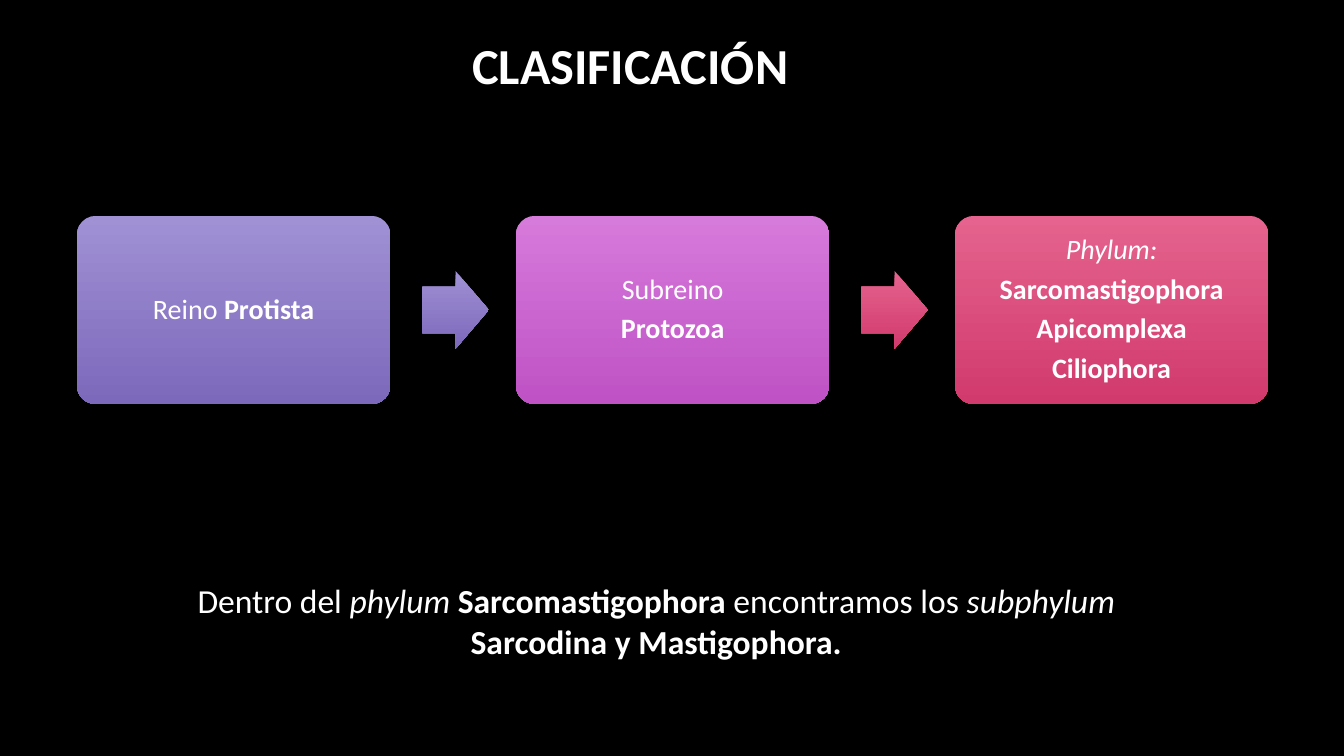
from dataclasses import dataclass

from pptx import Presentation
from pptx.dml.color import RGBColor
from pptx.enum.shapes import MSO_SHAPE as Shape
from pptx.enum.text import MSO_ANCHOR as Anchor, MSO_AUTO_SIZE as AutoSize, PP_ALIGN as Align
from pptx.shapes.autoshape import Shape as AutoShape
from pptx.slide import Slide
from pptx.text.text import TextFrame
from pptx.util import Pt


@dataclass(frozen=True)
class Gradient:
    top: str
    bottom: str


@dataclass(frozen=True)
class Theme:
    font: str = "Calibri"
    background: str = "000000"
    text: str = "FFFFFF"
    violet: Gradient = Gradient("A090D4", "7D69BB")
    orchid: Gradient = Gradient("D67ADB", "BF52C5")
    rose: Gradient = Gradient("E5638E", "D13A6D")
    title_size: float = 36
    note_size: float = 24
    box_size: float = 20


@dataclass(frozen=True)
class Span:
    text: str
    bold: bool = False
    italic: bool = False


@dataclass(frozen=True)
class Area:
    left: float
    top: float
    width: float
    height: float

    def shifted(self, distance: float) -> "Area":
        return Area(self.left + distance, self.top, self.width, self.height)

    def lengths(self) -> tuple[Pt, Pt, Pt, Pt]:
        return Pt(self.left), Pt(self.top), Pt(self.width), Pt(self.height)


@dataclass(frozen=True)
class Rank:
    lines: list[list[Span]]
    gradient: Gradient


@dataclass(frozen=True)
class Arrow:
    gradient: Gradient


THEME = Theme()
TITLE_AREA = Area(285.8, 20.9, 329, 51)
NOTE_AREA = Area(108.7, 411, 720, 94)
BOX_AREA = Area(54.9, 154.2, 224, 134.4)
ARROW_AREA = Area(301.7, 193.6, 47.5, 55.5)
PITCH = 313.6
BOX_INSET = 9.6

TITLE = [[Span("CLASIFICACIÓN", bold=True)]]
NOTE = [[
    Span("Dentro del "),
    Span("phylum ", italic=True),
    Span("Sarcomastigophora ", bold=True),
    Span("encontramos los "),
    Span("subphylum ", italic=True),
    Span("Sarcodina y Mastigophora.", bold=True),
]]
RANKS = [
    Rank([[Span("Reino "), Span("Protista", bold=True)]], THEME.violet),
    Rank([[Span("Subreino")], [Span("Protozoa", bold=True)]], THEME.orchid),
    Rank(
        [
            [Span("Phylum:", italic=True)],
            [Span("Sarcomastigophora", bold=True)],
            [Span("Apicomplexa", bold=True)],
            [Span("Ciliophora", bold=True)],
        ],
        THEME.rose,
    ),
]
ARROWS = [Arrow(THEME.violet), Arrow(THEME.rose)]


def write_lines(frame: TextFrame, lines: list[list[Span]], size: float) -> None:
    frame.word_wrap = True
    frame.text = "\n".join("" for _ in lines)
    for para, spans in zip(frame.paragraphs, lines):
        para.alignment = Align.CENTER
        for span in spans:
            run = para.add_run()
            run.text = span.text
            font = run.font
            font.name, font.size = THEME.font, Pt(size)
            font.bold, font.italic = span.bold, span.italic
            font.color.rgb = RGBColor.from_string(THEME.text)


def add_gradient_shape(page: Slide, kind: Shape, area: Area, gradient: Gradient,
                       adjustments: list[float]) -> AutoShape:
    shape = page.shapes.add_shape(kind, *area.lengths())
    shape.shadow.inherit = False
    shape.line.fill.background()
    for index, value in enumerate(adjustments):
        shape.adjustments[index] = value
    shape.fill.gradient()
    shape.fill.gradient_angle = 270
    for stop, position, color in zip(shape.fill.gradient_stops, (0, 1),
                                     (gradient.top, gradient.bottom)):
        stop.position = position
        stop.color.rgb = RGBColor.from_string(color)
    return shape


def add_rank(page: Slide, rank: Rank, area: Area) -> None:
    box = add_gradient_shape(page, Shape.ROUNDED_RECTANGLE, area, rank.gradient, [0.1])
    frame = box.text_frame
    frame.vertical_anchor = Anchor.MIDDLE
    frame.margin_left = frame.margin_right = Pt(BOX_INSET)
    frame.margin_top = frame.margin_bottom = Pt(BOX_INSET)
    write_lines(frame, rank.lines, THEME.box_size)
    for para in frame.paragraphs:
        para.line_spacing = 0.9
        para.space_after = Pt(6.6)


def add_title(page: Slide) -> None:
    title = page.shapes.title
    title.left, title.top, title.width, title.height = TITLE_AREA.lengths()
    title.text_frame.vertical_anchor = Anchor.TOP
    title.text_frame.auto_size = AutoSize.NONE
    write_lines(title.text_frame, TITLE, THEME.title_size)


def add_note(page: Slide) -> None:
    note = page.shapes.add_textbox(*NOTE_AREA.lengths())
    write_lines(note.text_frame, NOTE, THEME.note_size)


def main() -> None:
    deck = Presentation()
    deck.slide_width, deck.slide_height = Pt(960), Pt(540)
    page = deck.slides.add_slide(deck.slide_layouts[5])
    page.background.fill.solid()
    page.background.fill.fore_color.rgb = RGBColor.from_string(THEME.background)
    add_title(page)
    for index, rank in enumerate(RANKS):
        add_rank(page, rank, BOX_AREA.shifted(index * PITCH))
    for index, arrow in enumerate(ARROWS):
        add_gradient_shape(page, Shape.RIGHT_ARROW, ARROW_AREA.shifted(index * PITCH),
                           arrow.gradient, [0.6, 0.5])
    add_note(page)
    deck.save("out.pptx")


if __name__ == "__main__":
    main()
